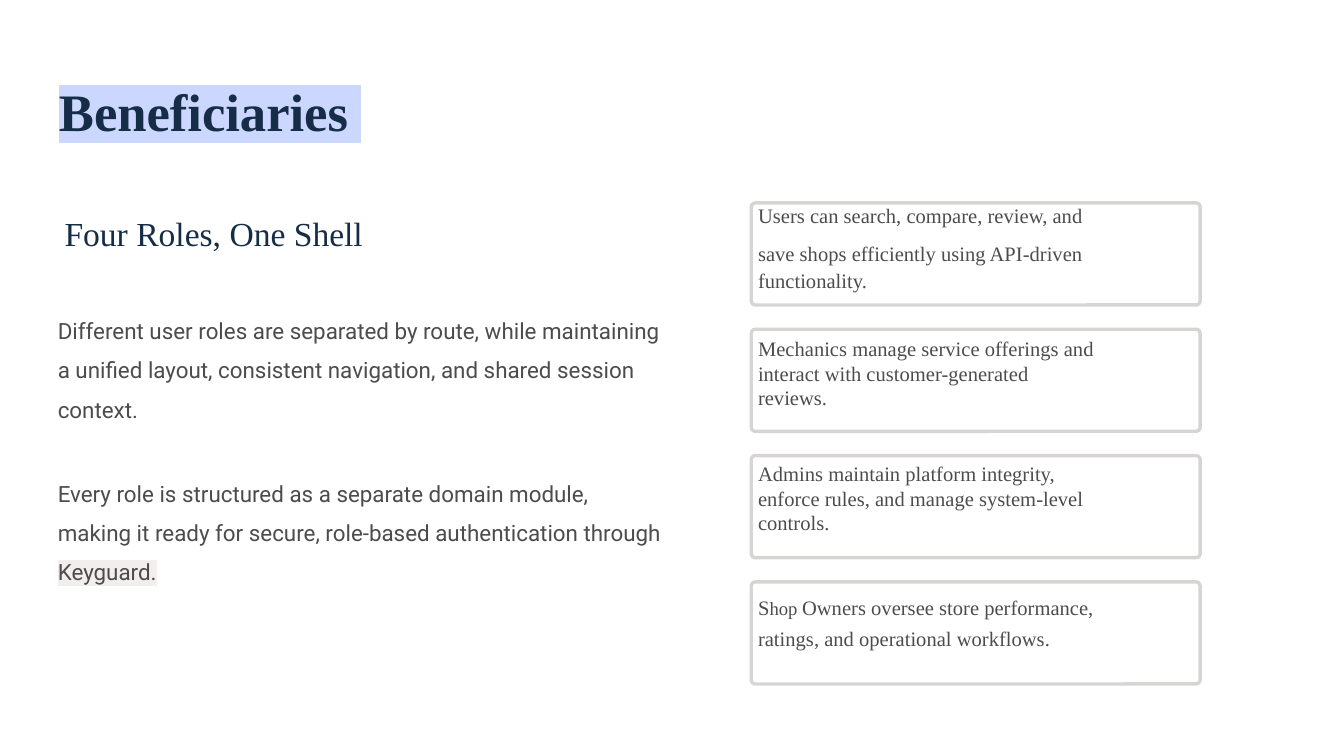
import pptx
import pptx.dml.color
import pptx.enum.shapes
import pptx.oxml
import pptx.oxml.ns
import pptx.util
from pptx.util import Inches

COLORS = {
    "navy": "152D47",
    "gray": "4C4C4D",
    "white": "FFFFFF",
    "border": "D8D4D4",
    "title_mark": "CCD7FF",
    "word_mark": "F2EEEE",
}
SERIF = "Times New Roman"
SANS = "Roboto"

CARD_TOP = 1.51
CARD_STEP = 0.94
CARDS = [
    (0, 0.67, None, [
        ("Users can search, compare, review, and save shops efficiently using API-driven", 11, None),
        (" ", 18, None),
        ("functionality.", 11, None),
    ]),
    (0.05, 0.58, None, [
        ("Mechanics manage service offerings and interact with customer-generated reviews.", 11, None),
    ]),
    (0.04, 0.31, None, [
        ("Admins maintain platform integrity, enforce rules, and manage system-level controls.", 11, None),
    ]),
    (0.05, 0.31, 1.25, [
        ("S", 11, None),
        ("hop ", 10, None),
        ("Owners oversee store performance, ratings, and operational workflows.", 11, None),
    ]),
]


def rgb(name):
    return pptx.dml.color.RGBColor.from_string(COLORS[name])


def highlight(r, color):
    mark = pptx.oxml.parse_xml(
        f'<a:highlight {pptx.oxml.ns.nsdecls("a")}>'
        f'<a:srgbClr val="{COLORS[color]}"/></a:highlight>'
    )
    r.font._element.append(mark)


def add_text(s, box, runs, font, color, spacing=None, bold=None, inset=0):
    sp = s.shapes.add_textbox(*map(Inches, box))
    tf = sp.text_frame
    tf.word_wrap = True
    tf.margin_left = tf.margin_top = tf.margin_right = tf.margin_bottom = Inches(inset)
    p = tf.paragraphs[0]
    p.line_spacing = spacing
    p.font.name = font
    p.font.bold = bold
    p.font.color.rgb = rgb(color)
    sizes = {size for _, size, _ in runs}
    if len(sizes) == 1:
        p.font.size = pptx.util.Pt(runs[0][1])
    for text, size, mark in runs:
        r = p.add_run()
        r.text = text
        if len(sizes) > 1:
            r.font.size = pptx.util.Pt(size)
        if mark:
            highlight(r, mark)


def add_card(s, top, text_offset, text_height, spacing, runs):
    sp = s.shapes.add_shape(
        pptx.enum.shapes.MSO_SHAPE.ROUNDED_RECTANGLE,
        Inches(5.59), Inches(top), Inches(3.34), Inches(0.76),
    )
    sp.adjustments[0] = 0.04
    sp.shadow.inherit = False
    sp.fill.solid()
    sp.fill.fore_color.rgb = rgb("white")
    sp.line.color.rgb = rgb("border")
    sp.line.width = pptx.util.Pt(1.8)
    add_text(s, (5.64, top + text_offset, 2.51, text_height), runs, SERIF, "gray", spacing)


def main():
    prs = pptx.Presentation()
    prs.slide_width = Inches(10)
    prs.slide_height = prs.slide_width * 9 // 16
    s = prs.slides.add_slide(prs.slide_layouts[6])

    add_text(s, (0.34, 0.49, 9.32, 0.63), [("Beneficiaries ", 28.2, "title_mark")],
             SERIF, "navy", bold=True, inset=0.1)
    add_text(s, (0.48, 1.51, 2.51, 0.31), [("Four Roles, One Shell", 18, None)],
             SERIF, "navy", 1.25)
    add_text(s, (0.43, 2.27, 4.52, 0.76), [
        ("Different user roles are separated by route, while maintaining a unified layout, "
         "consistent navigation, and shared session context.", 12, None),
    ], SANS, "gray", 1.46)
    add_text(s, (0.43, 3.48, 4.52, 1.05), [
        ("Every role is structured as a separate domain module, making it ready for secure, "
         "role-based authentication through ", 12, None),
        ("Keyguard.", 12, "word_mark"),
    ], SANS, "gray", 1.46)

    for i, card in enumerate(CARDS):
        add_card(s, CARD_TOP + i * CARD_STEP, *card)

    prs.save("out.pptx")


if __name__ == "__main__":
    main()
